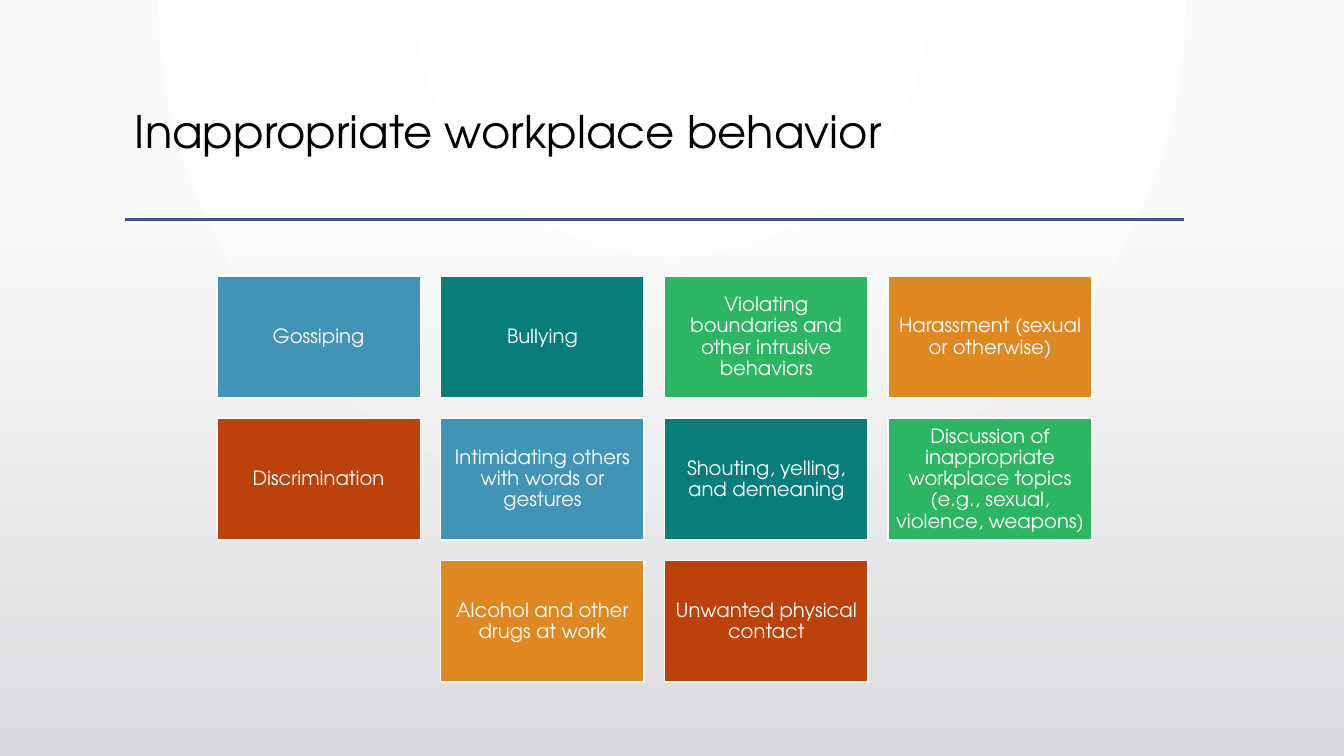
"""Build a slide that lists inappropriate workplace behavior as a grid of tiles."""
from itertools import cycle
from typing import NamedTuple

from lxml import etree
from pptx import Presentation
from pptx.dml.color import RGBColor
from pptx.enum.shapes import MSO_CONNECTOR, MSO_SHAPE
from pptx.enum.text import MSO_ANCHOR, PP_ALIGN
from pptx.oxml.ns import qn
from pptx.util import Inches, Pt

RECTANGLE = MSO_SHAPE.RECTANGLE
STRAIGHT = MSO_CONNECTOR.STRAIGHT
TOP, MIDDLE = MSO_ANCHOR.TOP, MSO_ANCHOR.MIDDLE
LEFT, CENTER = PP_ALIGN.LEFT, PP_ALIGN.CENTER


class Theme(NamedTuple):
    """Colours, font and type sizes of the slide."""
    font: str = "TeX Gyre Adventor"
    title_size: float = 32
    tile_size: float = 14
    ink: str = "000000"
    paper: str = "FFFFFF"
    paper_edge: str = "FAFAFA"
    haze: str = "DCDCE0"
    rule: str = "415588"
    rule_width: float = 2.5
    outline_width: float = 1.25
    tiles: tuple = ("4294B6", "087D7C", "2CB663", "DF8822", "BC410A")


class TileGrid(NamedTuple):
    """Grid of tiles, in inches, with every row centred on one axis."""
    axis: float = 6.49
    top: float = 2.74
    width: float = 2.02
    height: float = 1.21
    gap: float = 0.2
    inset: float = 0.06

    def place(self, row, column, count):
        """Return left and top of a tile in a row of the given count."""
        pitch = self.width + self.gap
        left = self.axis - (count * pitch - self.gap) / 2 + column * pitch
        return left, self.top + row * (self.height + self.gap)


THEME = Theme()
GRID = TileGrid()
WIDTH, HEIGHT = 13.33, 7.5
MARGIN, CONTENT_WIDTH = 1.24, 10.5
TITLE_TOP, TITLE_HEIGHT = 1.04, 1.15
RULE_Y, HAZE_TOP = 2.18, 2.21
TITLE = "Inappropriate workplace behavior"
BEHAVIORS = (
    ("Gossiping", "Bullying",
     "Violating boundaries and other intrusive behaviors",
     "Harassment (sexual or otherwise)"),
    ("Discrimination", "Intimidating others with words or gestures",
     "Shouting, yelling, and demeaning",
     "Discussion of inappropriate workplace topics "
     "(e.g., sexual, violence, weapons)"),
    ("Alcohol and other drugs at work", "Unwanted physical contact"),
)


def write_text(shape, text, *, size, color, align=LEFT, anchor=TOP, inset=None):
    """Put one formatted paragraph into a shape."""
    frame = shape.text_frame
    frame.word_wrap = True
    frame.vertical_anchor = anchor
    if inset is not None:
        frame.margin_left = frame.margin_right = Inches(inset)
        frame.margin_top = frame.margin_bottom = Inches(inset)
    paragraph = frame.paragraphs[0]
    paragraph.text = text
    paragraph.alignment = align
    paragraph.line_spacing = 0.9
    font = paragraph.runs[0].font
    font.name = THEME.font
    font.size = Pt(size)
    font.color.rgb = RGBColor.from_string(color)


def set_gradient(owner, start, end, *, start_alpha=100, radial=False):
    """Replace the gradient of an element with two stops, radial or downward."""
    gradient = next(owner.iter(qn("a:gradFill")))
    for child in list(gradient):
        gradient.remove(child)
    stops = etree.SubElement(gradient, qn("a:gsLst"))
    for position, color, alpha in ((0, start, start_alpha), (100, end, 100)):
        stop = etree.SubElement(stops, qn("a:gs"), pos=str(position * 1000))
        tint = etree.SubElement(stop, qn("a:srgbClr"), val=color)
        if alpha < 100:
            etree.SubElement(tint, qn("a:alpha"), val=str(alpha * 1000))
    if radial:
        focus = etree.SubElement(gradient, qn("a:path"), path="circle")
        etree.SubElement(focus, qn("a:fillToRect"),
                         l="43000", t="0", r="43000", b="100000")
    else:
        etree.SubElement(gradient, qn("a:lin"), ang="5400000", scaled="0")


def add_rectangle(slide, left, top, width, height):
    """Add a rectangle without shadow, measured in inches."""
    shape = slide.shapes.add_shape(
        RECTANGLE, Inches(left), Inches(top), Inches(width), Inches(height))
    shape.shadow.inherit = False
    return shape


def add_backdrop(slide):
    """Paint the radial background."""
    slide.background.fill.gradient()
    set_gradient(slide.background._cSld, THEME.paper, THEME.paper_edge, radial=True)


def add_haze(slide):
    """Add the grey haze that thickens toward the bottom edge."""
    haze = add_rectangle(slide, 0, HAZE_TOP, WIDTH, HEIGHT - HAZE_TOP)
    haze.line.fill.background()
    haze.fill.gradient()
    set_gradient(haze._element, THEME.haze, THEME.haze, start_alpha=0)


def add_heading(slide):
    """Add the title and the rule below it."""
    title = slide.shapes.add_textbox(
        Inches(MARGIN), Inches(TITLE_TOP), Inches(CONTENT_WIDTH), Inches(TITLE_HEIGHT))
    write_text(title, TITLE, size=THEME.title_size, color=THEME.ink)
    rule = slide.shapes.add_connector(
        STRAIGHT, Inches(MARGIN), Inches(RULE_Y),
        Inches(MARGIN + CONTENT_WIDTH), Inches(RULE_Y))
    rule.line.color.rgb = RGBColor.from_string(THEME.rule)
    rule.line.width = Pt(THEME.rule_width)
    etree.SubElement(rule._element.spPr, qn("a:effectLst"))


def add_tile(slide, left, top, behavior, color):
    """Add one coloured tile naming a behavior."""
    tile = add_rectangle(slide, left, top, GRID.width, GRID.height)
    tile.fill.solid()
    tile.fill.fore_color.rgb = RGBColor.from_string(color)
    tile.line.color.rgb = RGBColor.from_string(THEME.paper)
    tile.line.width = Pt(THEME.outline_width)
    write_text(tile, behavior, size=THEME.tile_size, color=THEME.paper,
               align=CENTER, anchor=MIDDLE, inset=GRID.inset)


def main():
    """Build the slide and save it."""
    deck = Presentation()
    deck.slide_width, deck.slide_height = Inches(WIDTH), Inches(HEIGHT)
    slide = deck.slides.add_slide(deck.slide_layouts[6])
    add_backdrop(slide)
    add_heading(slide)
    add_haze(slide)
    colors = cycle(THEME.tiles)
    for row, behaviors in enumerate(BEHAVIORS):
        for column, behavior in enumerate(behaviors):
            left, top = GRID.place(row, column, len(behaviors))
            add_tile(slide, left, top, behavior, next(colors))
    deck.save("out.pptx")


if __name__ == "__main__":
    main()
